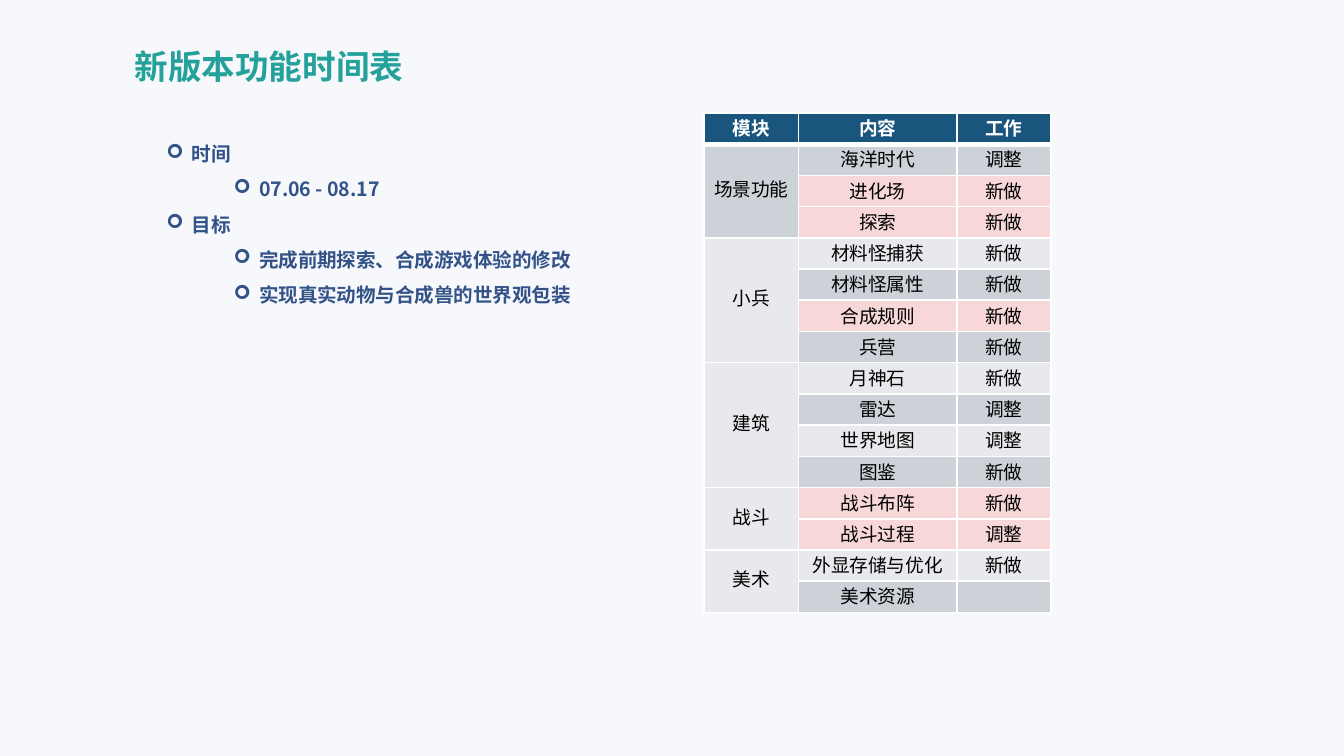
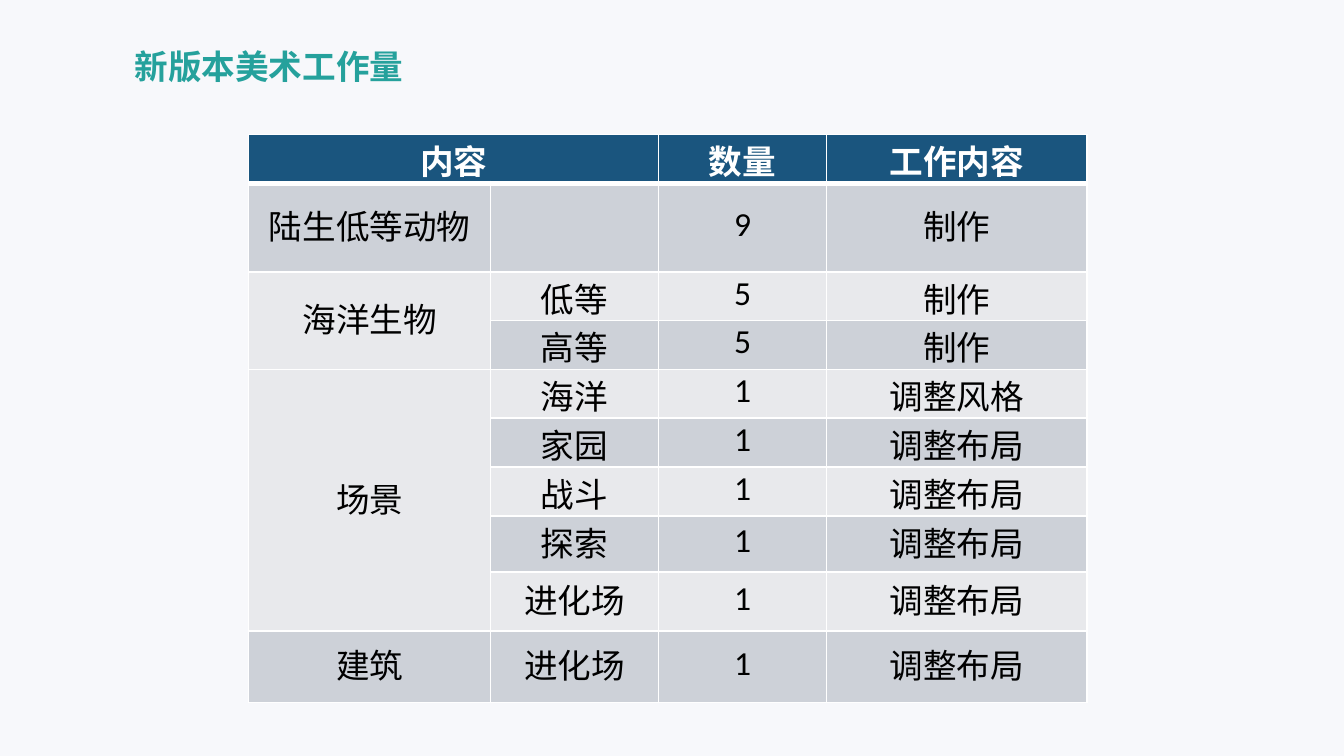
from lxml import etree
from pptx import Presentation
from pptx.dml.color import RGBColor
from pptx.enum import text
from pptx.oxml import ns
from pptx.util import Inches, Pt

COLORS = {
    "background": "F7F8FB",
    "title": "25A19C",
    "goal": "335388",
    "header": "1A557E",
    "dark_band": "CDD1D8",
    "light_band": "E8E9EC",
    "highlight": "F7D7D8",
    "white": "FFFFFF",
    "black": "000000",
}
CJK_FONT = "Noto Sans CJK SC"
TABLE_FONT = "Calibri"

GOALS = [
    (0, "时间"),
    (1, "07.06 - 08.17"),
    (0, "目标"),
    (1, "完成前期探索、合成游戏体验的修改"),
    (1, "实现真实动物与合成兽的世界观包装"),
]

# In the tables, None continues the cell above (in the header: the cell to the left)
SCHEDULE = [
    ("模块", "内容", "工作"),
    ("场景功能", "海洋时代", "调整"),
    (None, "进化场", "新做"),
    (None, "探索", "新做"),
    ("小兵", "材料怪捕获", "新做"),
    (None, "材料怪属性", "新做"),
    (None, "合成规则", "新做"),
    (None, "兵营", "新做"),
    ("建筑", "月神石", "新做"),
    (None, "雷达", "调整"),
    (None, "世界地图", "调整"),
    (None, "图鉴", "新做"),
    ("战斗", "战斗布阵", "新做"),
    (None, "战斗过程", "调整"),
    ("美术", "外显存储与优化", "新做"),
    (None, "美术资源", ""),
]
KEY_CONTENTS = {"进化场", "探索", "合成规则", "战斗布阵", "战斗过程"}

WORKLOAD = [
    ("内容", None, "数量", "工作内容"),
    ("陆生低等动物", "", "9", "制作"),
    ("海洋生物", "低等", "5", "制作"),
    (None, "高等", "5", "制作"),
    ("场景", "海洋", "1", "调整风格"),
    (None, "家园", "1", "调整布局"),
    (None, "战斗", "1", "调整布局"),
    (None, "探索", "1", "调整布局"),
    (None, "进化场", "1", "调整布局"),
    ("建筑", "进化场", "1", "调整布局"),
]


def rgb(name):
    return RGBColor.from_string(COLORS[name])


def style_font(paragraph, name, size, color, bold):
    font = paragraph.font
    font.name, font.size, font.bold = name, Pt(size), bold
    font.color.rgb = rgb(color)
    if name == CJK_FONT:
        properties = paragraph._p.pPr.find(ns.qn("a:defRPr"))
        etree.SubElement(properties, ns.qn("a:ea"), typeface=name)


def add_titled_slide(prs, title_text):
    slide = prs.slides.add_slide(prs.slide_layouts[5])
    title = slide.shapes.title
    title.left, title.top = Inches(0.9), Inches(0.29)
    title.width, title.height = Inches(2.2), Inches(0.4)
    frame = title.text_frame
    frame.text = title_text
    frame.word_wrap = False
    frame.margin_right = 0
    frame.auto_size = text.MSO_AUTO_SIZE.SHAPE_TO_FIT_TEXT
    frame.vertical_anchor = text.MSO_ANCHOR.TOP
    heading = frame.paragraphs[0]
    heading.alignment = text.PP_ALIGN.LEFT
    style_font(heading, CJK_FONT, 18, "title", True)
    return slide


def add_goals(slide):
    box = slide.shapes.add_textbox(Inches(1.14), Inches(0.92), Inches(4.1), Inches(1.43))
    frame = box.text_frame
    frame.word_wrap = True
    frame.auto_size = text.MSO_AUTO_SIZE.SHAPE_TO_FIT_TEXT
    for i, (level, goal_text) in enumerate(GOALS):
        goal = frame.add_paragraph() if i else frame.paragraphs[0]
        goal.text = goal_text
        goal.level = level
        goal.line_spacing = 1.5
        properties = goal._p.get_or_add_pPr()
        properties.set("marL", str(Inches(0.19 + 0.5 * level)))
        properties.set("indent", str(Inches(-0.19)))
        etree.SubElement(properties, ns.qn("a:buFont"), typeface="Wingdings")
        etree.SubElement(properties, ns.qn("a:buChar"), char="➢")
        style_font(goal, CJK_FONT, 10.5, "goal", True)


def add_borders(cell, top, bottom):
    properties = cell._tc.get_or_add_tcPr()
    for side, width in (("L", 1), ("R", 1), ("T", top), ("B", bottom)):
        line = etree.SubElement(properties, ns.qn(f"a:ln{side}"), w=str(Pt(width)))
        fill = etree.SubElement(line, ns.qn("a:solidFill"))
        etree.SubElement(fill, ns.qn("a:srgbClr"), val=COLORS["white"])


def format_cell(cell, content, row, size, fill):
    cell.text = content or ""
    cell.vertical_anchor = text.MSO_ANCHOR.MIDDLE
    cell.margin_left = cell.margin_right = cell.margin_top = Inches(0.01)
    cell.margin_bottom = Inches(0.05)
    add_borders(cell, top=3 if row == 1 else 1, bottom=3 if row == 0 else 1)
    cell.fill.solid()
    cell.fill.fore_color.rgb = rgb(fill)
    label = cell.text_frame.paragraphs[0]
    label.alignment = text.PP_ALIGN.CENTER
    style_font(label, TABLE_FONT, size, "black" if row else "white", row == 0)
    if not content:
        # Keeps an empty cell from stretching its row
        etree.SubElement(label._p, ns.qn("a:endParaRPr"), sz=str(size * 100))


def cell_fill(row, column, values, highlighted):
    if row == 0:
        return "header"
    if column and values[1] in highlighted:
        return "highlight"
    return "dark_band" if row % 2 else "light_band"


def merge_continued(table, rows):
    for column in range(1, len(rows[0])):
        if rows[0][column] is None:
            table.cell(0, column - 1).merge(table.cell(0, column))
    starts = [i for i, values in enumerate(rows) if values[0] is not None]
    for start, end in zip(starts, starts[1:] + [len(rows)]):
        if end - start > 1:
            table.cell(start, 0).merge(table.cell(end - 1, 0))


def add_table(slide, rows, place, widths, heights, size, highlighted=()):
    frame = slide.shapes.add_table(
        len(rows), len(widths), *[Inches(length) for length in place])
    table = frame.table
    for column, width in zip(table.columns, widths):
        column.width = Inches(width)
    for row, height in zip(table.rows, heights):
        row.height = Inches(height)
    for r, values in enumerate(rows):
        for c, content in enumerate(values):
            fill = cell_fill(r, c, values, highlighted)
            format_cell(table.cell(r, c), content, r, size, fill)
    merge_continued(table, rows)
    # Resizing columns and rows also resizes the frame
    frame.width, frame.height = Inches(place[2]), Inches(place[3])


def main():
    prs = Presentation()
    prs.slide_width = Inches(10)
    prs.slide_height = prs.slide_width * 9 // 16
    background = prs.slide_master.background.fill
    background.solid()
    background.fore_color.rgb = rgb("background")

    # Feature schedule
    schedule = add_titled_slide(prs, "新版本功能时间表")
    add_table(schedule, SCHEDULE, (5.24, 0.84, 2.76, 3.72), [0.7, 1.18, 0.7],
              [3.72 / len(SCHEDULE)] * len(SCHEDULE), 10, KEY_CONTENTS)
    add_goals(schedule)

    # Art workload: the plain rows share the height the taller ones leave
    workload = add_titled_slide(prs, "新版本美术工作量")
    plain = (4.23 - 0.66 - 0.42 - 0.44 - 0.53) / 6
    add_table(workload, WORKLOAD, (1.85, 1, 6.24, 4.23), [1.8, 1.25, 1.25, 1.94],
              [plain, 0.66] + [plain] * 5 + [0.42, 0.44, 0.53], 18)

    prs.save("out.pptx")


if __name__ == "__main__":
    main()
